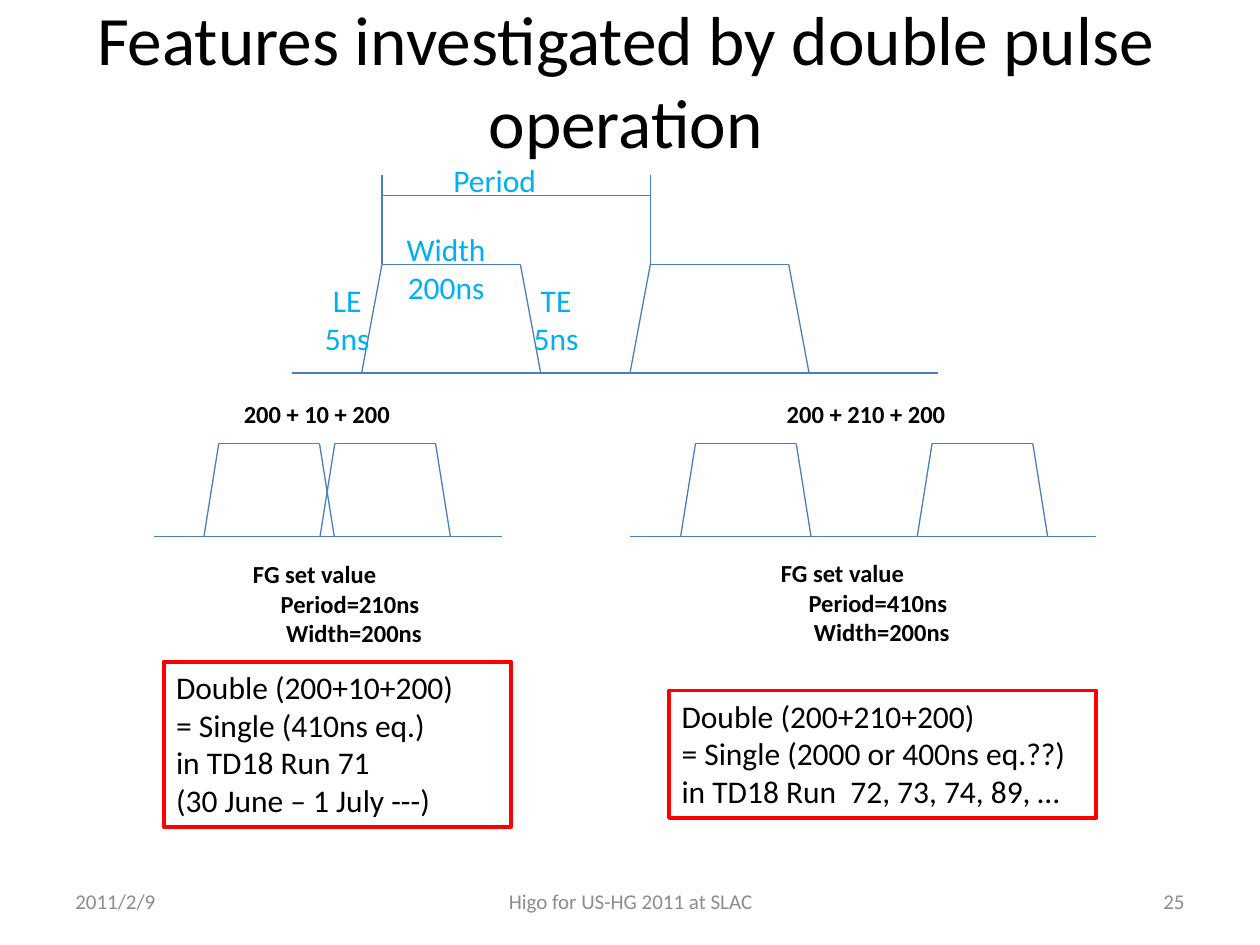
from lxml import etree
from pptx import Presentation
from pptx.dml.color import RGBColor
from pptx.enum import shapes, text
from pptx.oxml.ns import qn
from pptx.util import Cm, Pt

THEME = {
    "font": "Calibri", "black": "000000", "grey": "8C8C8C", "sky": "00B0F0",
    "wave": "4B7EBC", "red": "FF0000",
    "title": 39.6, "body": 18, "note": 14, "foot": 12, "thin": 0.75, "thick": 2.25,
}
LEFT, MID, RIGHT = text.PP_ALIGN.LEFT, text.PP_ALIGN.CENTER, text.PP_ALIGN.RIGHT

# All lengths are in centimetres.
TITLE = "Features investigated by double pulse operation"
FOOT = [
    ("2011/2/9", 1.27, 5.92, LEFT),
    ("Higo for US-HG 2011 at SLAC", 8.69, 8.05, MID),
    ("25", 18.21, 5.92, RIGHT),
]
# Pulse pairs: starts of the pulses, base line, slope, flat top, top and base heights
WAVES = [
    {"starts": (4.11, 6.45), "base": (3.1, 10.11), "slope": 0.3, "flat": 2.03, "y": (8.94, 10.82)},
    {"starts": (7.29, 12.7), "base": (5.89, 18.9), "slope": 0.41, "flat": 2.79, "y": (5.33, 7.52)},
    {"starts": (13.72, 18.49), "base": (12.7, 22.1), "slope": 0.3, "flat": 2.03, "y": (8.94, 10.82)},
]
MARKS = {"top": 3.53, "span": 3.94}
LABELS = [
    (["LE", "5ns"], (6.1, 5.54, 1.8, 1.8), MID),
    (["TE", "5ns"], (10.31, 5.54, 1.8, 1.8), MID),
    (["Period"], (8.89, 3.12, 2.59, 1.02), LEFT),
    (["Width", "200ns"], (7.7, 4.52, 2.59, 1.8), MID),
]
HEADS = [("200 + 10 + 200", 4.42), ("200 + 210 + 200", 15.49)]
SETS = [
    (["FG set value", "Period=210ns", "Width=200ns"], 4.85, 11.15),
    (["FG set value", "Period=410ns", "Width=200ns"], 15.49, 11.13),
]
STEPS = (0, 0.56, 0.67)
BOXES = [
    (["Double (200+10+200)", "= Single (410ns eq.)", "in TD18 Run 71",
      "(30 June – 1 July ---)"], (3.3, 13.34, 7.01, 3.33)),
    (["Double (200+210+200)", "= Single (2000 or 400ns eq.??)",
      "in TD18 Run  72, 73, 74, 89, …"], (13.49, 13.92, 8.61, 2.57)),
]


def color(name):
    return RGBColor.from_string(THEME[name])


def write(frame, lines, size, ink="black", align=LEFT, bold=False, steps=(),
          anchor=text.MSO_ANCHOR.TOP):
    frame.word_wrap = True
    frame.auto_size = text.MSO_AUTO_SIZE.NONE
    frame.vertical_anchor = anchor
    for i, line in enumerate(lines):
        para = frame.paragraphs[0] if i == 0 else frame.add_paragraph()
        para.alignment = align
        if steps:
            para._p.get_or_add_pPr().set("marL", str(Cm(steps[i])))
        run = para.add_run()
        run.text = line
        font = run.font
        font.name, font.size, font.bold = THEME["font"], Pt(THEME[size]), bold
        font.color.rgb = color(ink)


def label(slide, lines, place, size, **style):
    box = slide.shapes.add_textbox(*map(Cm, place))
    write(box.text_frame, lines, size, **style)


def line(slide, x1, y1, x2, y2):
    wire = slide.shapes.add_connector(
        shapes.MSO_CONNECTOR.STRAIGHT, Cm(x1), Cm(y1), Cm(x2), Cm(y2))
    wire.line.color.rgb = color("wave")
    wire.line.width = Pt(THEME["thin"])
    etree.SubElement(wire._element.spPr, qn("a:effectLst"))


def wave(slide, starts, base, slope, flat, y):
    top, low = y
    for x in starts:
        rise, fall = x + slope, x + slope + flat
        line(slide, x, low, rise, top)
        line(slide, rise, top, fall, top)
        line(slide, fall, top, fall + slope, low)
    line(slide, base[0], low, base[1], low)


def period(slide, pair):
    """Mark the span between the rising corners of a pulse pair."""
    ends = [x + pair["slope"] for x in pair["starts"]]
    for x in ends:
        line(slide, x, pair["y"][0], x, MARKS["top"])
    line(slide, ends[0], MARKS["span"], ends[1], MARKS["span"])


def frame_box(slide, lines, place):
    box = slide.shapes.add_shape(shapes.MSO_SHAPE.RECTANGLE, *map(Cm, place))
    box.shadow.inherit = False
    box.fill.background()
    box.line.color.rgb = color("red")
    box.line.width = Pt(THEME["thick"])
    write(box.text_frame, lines, "body")


def main():
    deck = Presentation()
    deck.slide_width, deck.slide_height = Cm(25.4), Cm(19.05)
    slide = deck.slides.add_slide(deck.slide_layouts[5])

    title = slide.shapes.title
    title.left, title.top, title.width, title.height = map(Cm, (0.51, 0, 24.21, 3.18))
    write(title.text_frame, [TITLE], "title", align=MID, anchor=text.MSO_ANCHOR.MIDDLE)

    for words, left, width, align in FOOT:
        label(slide, [words], (left, 17.65, width, 1.02), "foot", ink="grey",
              align=align, anchor=text.MSO_ANCHOR.MIDDLE)
    for pair in WAVES:
        wave(slide, **pair)
    period(slide, WAVES[1])
    for lines, place, align in LABELS:
        label(slide, lines, place, "body", ink="sky", align=align)
    for words, left in HEADS:
        label(slide, [words], (left, 7.92, 3.94, 0.86), "note", align=MID, bold=True)
    for lines, left, top in SETS:
        label(slide, lines, (left, top, 3.94, 2.06), "note", bold=True, steps=STEPS)
    for lines, place in BOXES:
        frame_box(slide, lines, place)

    deck.save("out.pptx")


if __name__ == "__main__":
    main()
